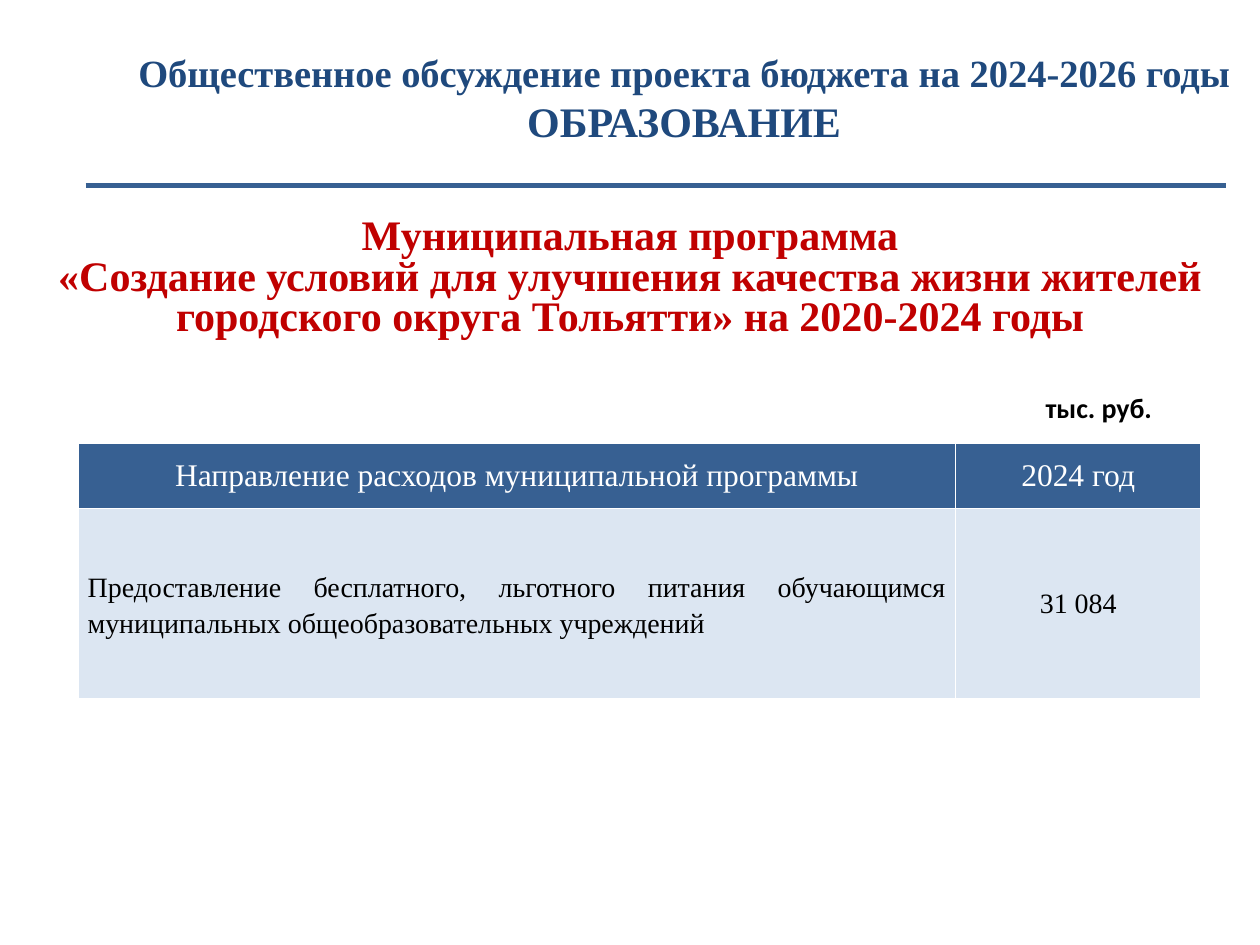
from lxml import etree
from pptx import Presentation
from pptx.dml.color import RGBColor
from pptx.enum import shapes, text
from pptx.oxml.ns import qn
from pptx.util import Pt

BLUE = RGBColor(0x37, 0x60, 0x92)
NAVY = RGBColor(0x1F, 0x49, 0x7D)
RED = RGBColor(0xC0, 0x00, 0x00)
PALE = RGBColor(0xDC, 0xE6, 0xF2)
WHITE = RGBColor(0xFF, 0xFF, 0xFF)
BLACK = RGBColor(0x00, 0x00, 0x00)
SERIF = "Times New Roman"
LEFT, CENTER, JUSTIFY = text.PP_ALIGN.LEFT, text.PP_ALIGN.CENTER, text.PP_ALIGN.JUSTIFY
MIDDLE, TOP = text.MSO_ANCHOR.MIDDLE, text.MSO_ANCHOR.TOP

HEADER = [
    ("Общественное обсуждение проекта бюджета на 2024-2026 годы", 22),
    ("ОБРАЗОВАНИЕ", 24),
]
TITLE = ("Муниципальная программа\v«Создание условий для улучшения качества жизни "
         "жителей городского округа Тольятти» на 2020-2024 годы")
UNIT = "тыс. руб."
ROWS = [
    ("Направление расходов муниципальной программы", "2024 год"),
    ("Предоставление бесплатного, льготного питания обучающимся "
     "муниципальных общеобразовательных учреждений", "31 084"),
]
COL_WIDTHS = (501, 140.5)
ROW_HEIGHTS = (37.1, 108.9)


def write(tf, paragraphs, color=BLACK, font=SERIF, bold=False, align=CENTER,
          spacing=1.0, anchor=MIDDLE):
    tf.word_wrap = True
    tf.vertical_anchor = anchor
    for i, (line, size) in enumerate(paragraphs):
        p = tf.add_paragraph() if i else tf.paragraphs[0]
        p.text = line
        p.alignment = align
        p.line_spacing = spacing
        for r in p.runs:
            r.font.name, r.font.size, r.font.bold = font, Pt(size), bold
            r.font.color.rgb = color


def add_text(s, box, paragraphs, **fmt):
    sp = s.shapes.add_textbox(*map(Pt, box))
    write(sp.text_frame, paragraphs, **fmt)


def set_borders(cell, color, width):
    tc_pr = cell._tc.get_or_add_tcPr()
    for side in ("lnL", "lnR", "lnT", "lnB"):
        ln = etree.SubElement(tc_pr, qn(f"a:{side}"), w=str(Pt(width)))
        fill = etree.SubElement(ln, qn("a:solidFill"))
        etree.SubElement(fill, qn("a:srgbClr"), val=str(color))


def add_expenses(s):
    frame = s.shapes.add_table(len(ROWS), len(COL_WIDTHS), Pt(44.9), Pt(253.4),
                               Pt(sum(COL_WIDTHS)), Pt(sum(ROW_HEIGHTS)))
    table = frame.table
    for col, width in zip(table.columns, COL_WIDTHS):
        col.width = Pt(width)
    for i, (row, height) in enumerate(zip(ROWS, ROW_HEIGHTS)):
        table.rows[i].height = Pt(height)
        for j, value in enumerate(row):
            cell = table.cell(i, j)
            head, label = i == 0, i > 0 and j == 0
            set_borders(cell, WHITE, 1)
            cell.fill.solid()
            cell.fill.fore_color.rgb = BLUE if head else PALE
            write(cell.text_frame, [(value, 18 if head else 16)],
                  color=WHITE if head else BLACK,
                  align=JUSTIFY if label else CENTER,
                  spacing=1.15 if label else 1.0)
            cell.vertical_anchor = MIDDLE
            if label:
                cell.margin_left = cell.margin_right = Pt(5.2)
                cell.margin_top = cell.margin_bottom = 0


def add_rule(s):
    line = s.shapes.add_connector(shapes.MSO_CONNECTOR.STRAIGHT,
                                  Pt(49), Pt(105.8), Pt(700.6), Pt(105.8))
    line.line.color.rgb = BLUE
    line.line.width = Pt(3)
    etree.SubElement(line._element.spPr, qn("a:effectLst"))


def main():
    prs = Presentation()
    prs.slide_width, prs.slide_height = Pt(720), Pt(540)
    s = prs.slides.add_slide(prs.slide_layouts[5])
    title = s.shapes.title
    title.left, title.top, title.width, title.height = map(Pt, (0, 108.7, 720, 101.5))
    write(title.text_frame, [(TITLE, 24)], color=RED, bold=True, spacing=0.8)
    title.text_frame.auto_size = text.MSO_AUTO_SIZE.NONE
    add_expenses(s)
    add_text(s, (590.4, 219.6, 99.4, 26.6), [(UNIT, 16)], font="Calibri",
             bold=True, align=LEFT, anchor=TOP)
    add_rule(s)
    add_text(s, (61.9, 12.2, 658.1, 87.1), HEADER, color=NAVY, bold=True)
    prs.save("out.pptx")


if __name__ == "__main__":
    main()
